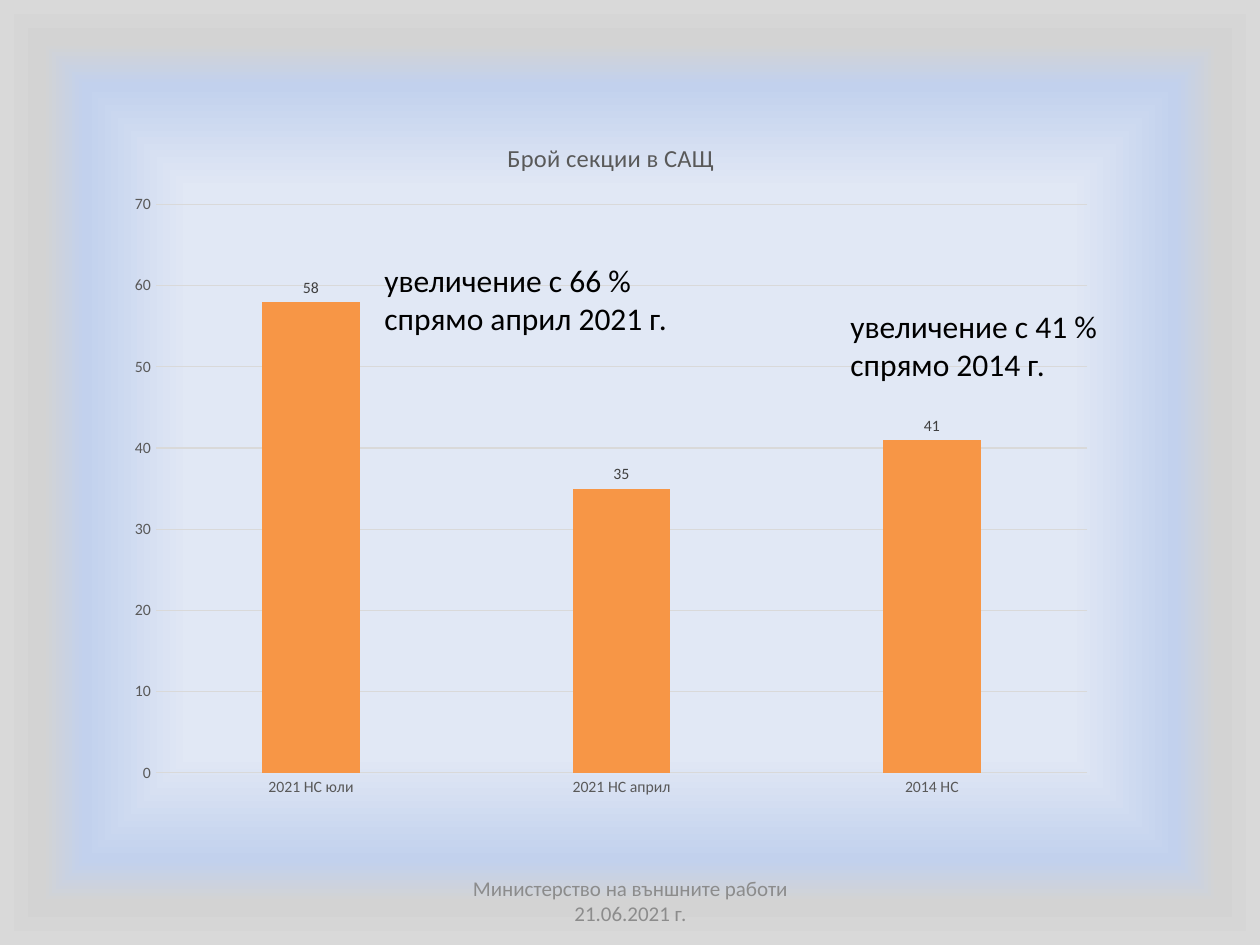
"""Build a slide with a column chart of the number of polling sections in the USA."""
import pptx
import pptx.chart.data
import pptx.dml.color
import pptx.enum.chart
import pptx.enum.text
import pptx.oxml
import pptx.oxml.ns
import pptx.util

SCALE = 914400 / 126


def px(*lengths):
    return [pptx.util.Emu(round(length * SCALE)) for length in lengths]


def style(font, size, color):
    font.name = "Calibri"
    font.size = pptx.util.Pt(size)
    font.bold = False
    font.color.rgb = pptx.dml.color.RGBColor.from_string(color)


deck = pptx.Presentation()
deck.slide_width, deck.slide_height = px(1260, 945)
page = deck.slides.add_slide(deck.slide_layouts[6])

stops = [(60, "E1E8F5"), (82, "C2D1ED"), (91, "D3D3D3"), (100, "D9D9D9")]
stop_xml = "".join(
    f'<a:gs pos="{position * 1000}"><a:srgbClr val="{color}"/></a:gs>'
    for position, color in stops
)
background = pptx.oxml.parse_xml(
    f'<p:bg {pptx.oxml.ns.nsdecls("p", "a")}><p:bgPr><a:gradFill rotWithShape="1">'
    f'<a:gsLst>{stop_xml}</a:gsLst><a:path path="shape">'
    '<a:fillToRect l="50000" t="50000" r="50000" b="50000"/></a:path>'
    '</a:gradFill><a:effectLst/></p:bgPr></p:bg>'
)
page.element.cSld.insert(0, background)

title = "Брой секции в САЩ"
data = pptx.chart.data.CategoryChartData()
data.categories = ["2021 НС юли", "2021 НС април", "2014 НС"]
data.add_series(title, [58, 35, 41])
chart = page.shapes.add_chart(
    pptx.enum.chart.XL_CHART_TYPE.COLUMN_CLUSTERED, *px(115, 116, 992, 694), data
).chart
style(chart.font, 10, "000000")
chart.has_legend = False
chart.has_title = True
chart.chart_title.include_in_layout = False
heading = chart.chart_title.text_frame.paragraphs[0]
heading.text = title
style(heading.font, 14, "595959")

for axis in (chart.category_axis, chart.value_axis):
    axis.major_tick_mark = pptx.enum.chart.XL_TICK_MARK.NONE
    axis.minor_tick_mark = pptx.enum.chart.XL_TICK_MARK.NONE
    style(axis.tick_labels.font, 9, "595959")
chart.value_axis.minimum_scale = 0
chart.value_axis.maximum_scale = 70
chart.value_axis.major_unit = 10
chart.value_axis.has_major_gridlines = True
chart.value_axis.format.line.fill.background()
for line in (chart.category_axis.format.line, chart.value_axis.major_gridlines.format.line):
    line.color.rgb = pptx.dml.color.RGBColor.from_string("D9D9D9")
    line.width = pptx.util.Pt(0.75)

plot = chart.plots[0]
plot.gap_width = 219
plot.overlap = -27
plot.vary_by_categories = False
series = plot.series[0]
series.format.fill.solid()
series.format.fill.fore_color.rgb = pptx.dml.color.RGBColor.from_string("F79646")
labels = series.data_labels
labels.show_value = True
labels.position = pptx.enum.chart.XL_LABEL_POSITION.OUTSIDE_END
style(labels.font, 9, "404040")

left = pptx.enum.text.PP_ALIGN.LEFT
center = pptx.enum.text.PP_ALIGN.CENTER
top = pptx.enum.text.MSO_ANCHOR.TOP
middle = pptx.enum.text.MSO_ANCHOR.MIDDLE
texts = [
    ("Министерство на външните работи 21.06.2021 г.", (431, 876, 399, 50), 12, "8C8C8C", center, middle),
    ("увеличение с 66 % спрямо април 2021 г.", (372, 255, 318, 89), 18, "000000", left, top),
    ("увеличение с 41 % спрямо 2014 г.", (838, 301, 318, 89), 18, "000000", left, top),
]
for text, place, size, color, alignment, anchor in texts:
    box = page.shapes.add_textbox(*px(*place))
    box.text_frame.word_wrap = True
    box.text_frame.vertical_anchor = anchor
    para = box.text_frame.paragraphs[0]
    para.text = text
    para.alignment = alignment
    style(para.font, size, color)

deck.save("out.pptx")
